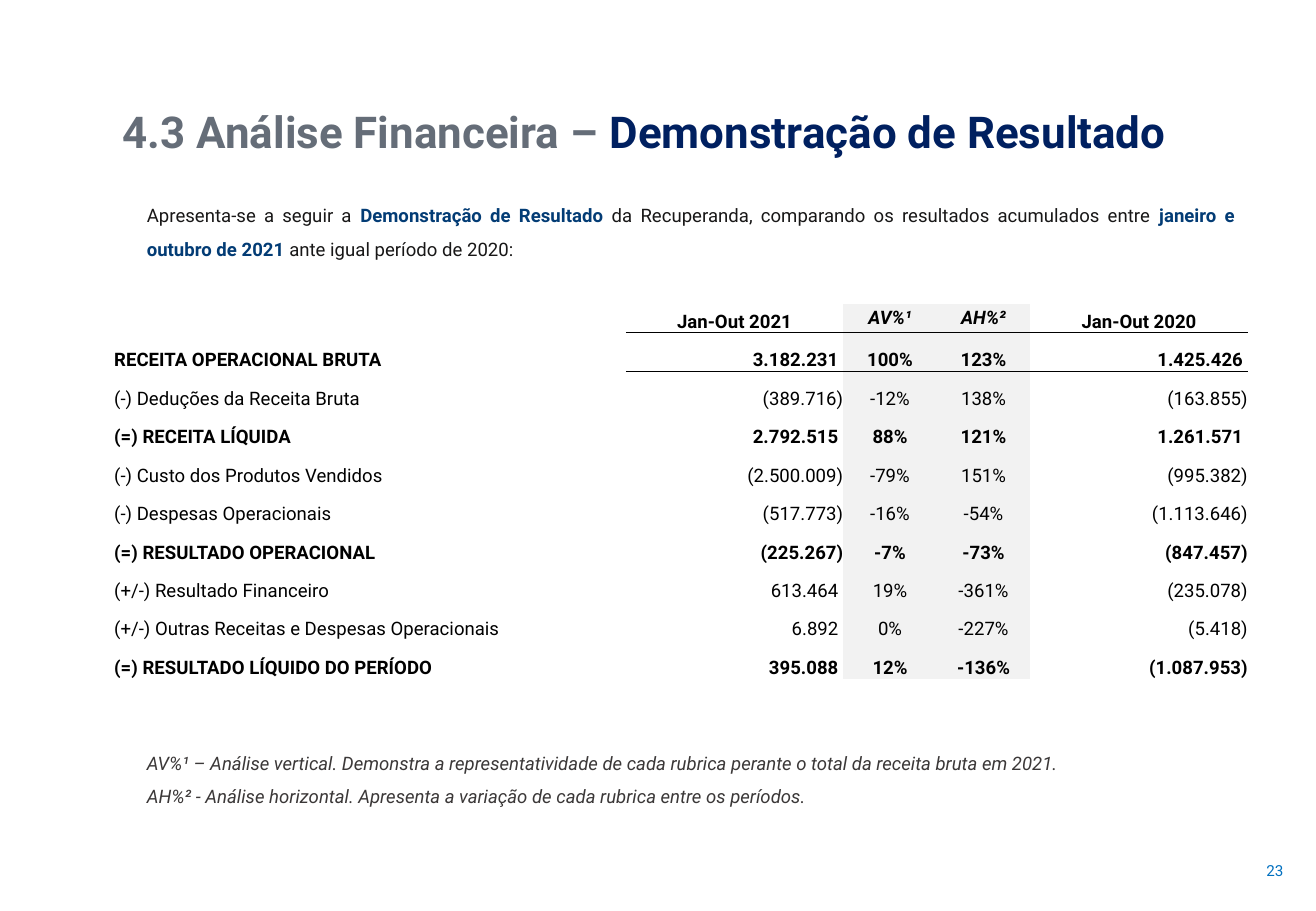
import lxml.etree
import pptx
import pptx.dml.color
import pptx.enum.text
import pptx.oxml.ns
import pptx.util

PX = 9144  # 100 px to the inch
ALIGN = pptx.enum.text.PP_ALIGN
ANCHOR = pptx.enum.text.MSO_ANCHOR
AUTO_SIZE = pptx.enum.text.MSO_AUTO_SIZE
NO_STYLE_NO_GRID = "{2D5ABB26-0587-4C30-8999-92F81FD0307C}"
BLACK, WHITE, SHADE = "000000", "FFFFFF", "F2F2F2"
INK, ACCENT, NOTE = "181717", "033C75", "3B3838"
COLUMNS = [421, 179, 77, 77, 179]
HEADER_HEIGHT = 24

INTRO = [[
    ("Apresenta-se a seguir a ", INK, {}),
    ("Demonstração de Resultado ", ACCENT, {"bold": True}),
    ("da Recuperanda, comparando os resultados acumulados entre ", INK, {}),
    ("janeiro e outubro de 2021 ", ACCENT, {"bold": True}),
    ("ante igual período de 2020:", INK, {}),
]]
NOTES = [[(line, NOTE, {"italic": True})] for line in (
    "AV%¹ – Análise vertical. Demonstra a representatividade de cada rubrica "
    "perante o total da receita bruta em 2021.",
    "AH%² - Análise horizontal. Apresenta a variação de cada rubrica entre os períodos.",
)]
HEADINGS = ["", "Jan-Out 2021", "AV%¹", "AH%²", "Jan-Out 2020"]
RESULTS = [
    ["RECEITA OPERACIONAL BRUTA", "3.182.231", "100%", "123%", "1.425.426"],
    ["(-) Deduções da Receita Bruta", "(389.716)", "-12%", "138%", "(163.855)"],
    ["(=) RECEITA LÍQUIDA", "2.792.515", "88%", "121%", "1.261.571"],
    ["(-) Custo dos Produtos Vendidos", "(2.500.009)", "-79%", "151%", "(995.382)"],
    ["(-) Despesas Operacionais", "(517.773)", "-16%", "-54%", "(1.113.646)"],
    ["(=) RESULTADO OPERACIONAL", "(225.267)", "-7%", "-73%", "(847.457)"],
    ["(+/-) Resultado Financeiro", "613.464", "19%", "-361%", "(235.078)"],
    ["(+/-) Outras Receitas e Despesas Operacionais", "6.892", "0%", "-227%", "(5.418)"],
    ["(=) RESULTADO LÍQUIDO DO PERÍODO", "395.088", "12%", "-136%", "(1.087.953)"],
]


def emu(box):
    return [length * PX for length in box]


def apply(target, values):
    for name, value in values.items():
        setattr(target, name, value)


def paint(colour_holder, colour):
    """Colour a font or a fill with a solid hex colour."""
    fill = getattr(colour_holder, "fill", colour_holder)
    fill.solid()
    fill.fore_color.rgb = pptx.dml.color.RGBColor.from_string(colour)


def write(para, spans, size=11):
    for text, colour, style in spans:
        span = para.add_run()
        span.text = text
        values = {"name": "Roboto", "size": pptx.util.Pt(size), "bold": False, "italic": False}
        apply(span.font, values | style)
        paint(span.font, colour)


def add_title(page, box):
    title = page.shapes.title
    apply(title, dict(zip(("left", "top", "width", "height"), emu(box))))
    frame = title.text_frame
    apply(frame, {"word_wrap": False, "vertical_anchor": ANCHOR.TOP,
                  "auto_size": AUTO_SIZE.SHAPE_TO_FIT_TEXT})
    para = frame.paragraphs[0]
    para.alignment = ALIGN.LEFT
    write(para, [("4.3 Análise Financeira – ", "656D78", {"bold": True}),
                 ("Demonstração de Resultado", "002060", {"bold": True})], 26)


def add_text(page, box, paragraphs):
    frame = page.shapes.add_textbox(*emu(box)).text_frame
    apply(frame, {"word_wrap": True, "auto_size": AUTO_SIZE.SHAPE_TO_FIT_TEXT})
    for index, spans in enumerate(paragraphs):
        para = frame.add_paragraph() if index else frame.paragraphs[0]
        apply(para, {"alignment": ALIGN.JUSTIFY, "line_spacing": 1.5})
        write(para, spans)


def add_page_number(page, box):
    frame = page.shapes.add_textbox(*emu(box)).text_frame
    apply(frame, {"word_wrap": True, "vertical_anchor": ANCHOR.MIDDLE})
    frame.paragraphs[0].alignment = ALIGN.RIGHT
    write(frame.paragraphs[0], [("23", "0070C0", {})], 9)


def add_border(cell, side):
    line = lxml.etree.Element(pptx.oxml.ns.qn(f"a:{side}"), w="6350")
    fill = lxml.etree.SubElement(line, pptx.oxml.ns.qn("a:solidFill"))
    lxml.etree.SubElement(fill, pptx.oxml.ns.qn("a:srgbClr"), val=BLACK)
    cell._tc.get_or_add_tcPr().insert(0, line)


def fill_cell(cell, text, row, column):
    heading, percent = row == 0, column in (2, 3)
    amount = column in (1, 4) and not heading
    # Positive amounts leave room for the bracket that closes negative ones.
    inset = 4 * PX if amount and not text.endswith(")") else 0
    apply(cell, {"margin_left": 0, "margin_top": 0, "margin_right": inset, "margin_bottom": 0,
                 "vertical_anchor": ANCHOR.MIDDLE if heading and percent else ANCHOR.BOTTOM})
    paint(cell, SHADE if percent else WHITE)
    if column and row < 2:
        add_border(cell, "lnB" if heading else "lnT")
    para = cell.text_frame.paragraphs[0]
    if not text:
        lxml.etree.SubElement(para._p, pptx.oxml.ns.qn("a:endParaRPr"), sz="1100")
        return
    para.alignment = ALIGN.LEFT if column == 0 else ALIGN.RIGHT if amount else ALIGN.CENTER
    total = row == 1 or RESULTS[row - 1][0].startswith("(=)")
    write(para, [(text, BLACK, {"bold": heading or total, "italic": heading and percent})])


def add_results(page, box):
    rows = [HEADINGS] + RESULTS
    holder = page.shapes.add_table(len(rows), len(COLUMNS), *emu(box))
    next(holder._element.iter(pptx.oxml.ns.qn("a:tableStyleId"))).text = NO_STYLE_NO_GRID
    table = holder.table
    apply(table, {"first_row": False, "horz_banding": False})
    for column, width in zip(table.columns, COLUMNS):
        column.width = width * PX
    row_height = (box[3] - HEADER_HEIGHT) * PX // len(RESULTS)
    for row, texts in enumerate(rows):
        table.rows[row].height = row_height if row else HEADER_HEIGHT * PX
        for column, text in enumerate(texts):
            fill_cell(table.cell(row, column), text, row, column)


def main():
    deck = pptx.Presentation()
    apply(deck, {"slide_width": 1083 * PX, "slide_height": 750 * PX})
    page = deck.slides.add_slide(deck.slide_layouts.get_by_name("Title Only"))
    paint(page.background, WHITE)
    add_page_number(page, (987, 692, 79, 50))
    add_title(page, (91, 81, 936, 54))
    add_text(page, (111, 154, 915, 63), INTRO)
    add_text(page, (111, 605, 870, 63), NOTES)
    add_results(page, (94, 250, sum(COLUMNS), 309))
    deck.save("out.pptx")


if __name__ == "__main__":
    main()
